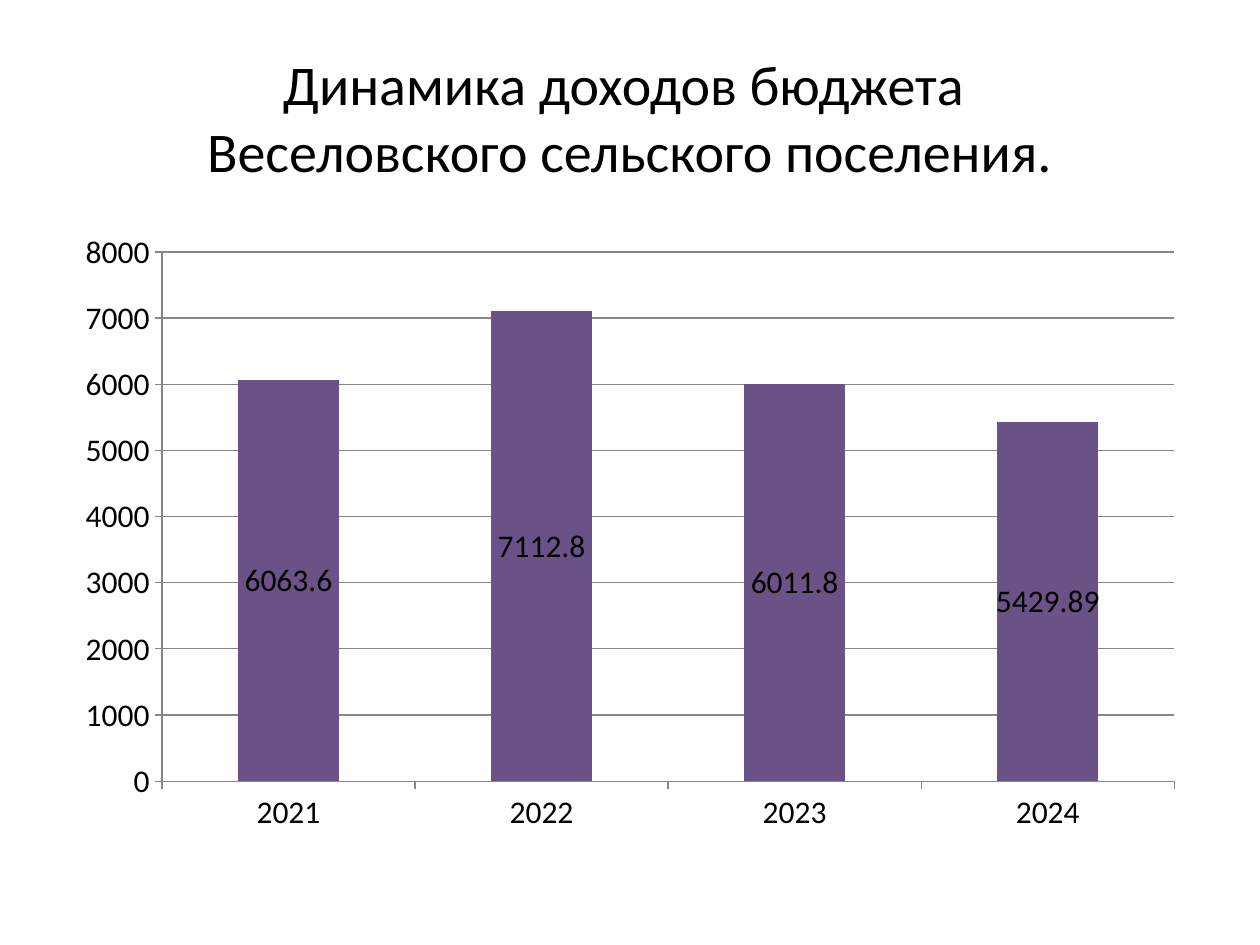
"""Build a slide with a stacked column chart of budget revenue by year."""
import pptx
import pptx.chart.data
import pptx.dml.color
import pptx.enum.chart
import pptx.enum.text
import pptx.util

TITLE = "Динамика доходов бюджета \vВеселовского сельского поселения."
YEARS = ["2021", "2022", "2023", "2024"]
SERIES = [
    ("Series 1", [6063.6, 7112.8, 6011.8, 5429.89], "revenue"),
    ("Series 2", [0, 0, 0, 0], "second"),
    ("Series 3", [0, 0, 0, 0], "third"),
]
THEME = {
    "font": "Calibri", "title_size": 32, "chart_size": 18,
    "text": "000000", "axis": "878787",
    "revenue": "6A5286", "second": "C0504D", "third": "9BBB59",
}
WIDTH, HEIGHT = pptx.util.Inches(10), pptx.util.Inches(7.5)
MARGIN, CONTENT = int(WIDTH * 0.05), int(WIDTH * 0.9)
TITLE_TOP, TITLE_HEIGHT = int(HEIGHT * 0.04), pptx.util.Inches(1.25)
CHART_TOP, CHART_HEIGHT = pptx.util.Inches(1.75), int(HEIGHT * 0.66)


def color(name):
    """Return a theme colour."""
    return pptx.dml.color.RGBColor.from_string(THEME[name])


def style_font(font, size):
    """Apply the theme font, size and text colour."""
    font.name = THEME["font"]
    font.size = pptx.util.Pt(THEME[size])
    font.color.rgb = color("text")


def style_line(line):
    """Draw an axis or grid line in the theme colour."""
    line.color.rgb = color("axis")
    line.width = pptx.util.Pt(0.75)


def add_title(slide):
    """Fill and place the title placeholder."""
    title = slide.shapes.title
    title.left, title.top = MARGIN, TITLE_TOP
    title.width, title.height = CONTENT, TITLE_HEIGHT
    tf = title.text_frame
    tf.text = TITLE
    tf.vertical_anchor = pptx.enum.text.MSO_ANCHOR.MIDDLE
    p = tf.paragraphs[0]
    p.alignment = pptx.enum.text.PP_ALIGN.CENTER
    for r in p.runs:
        style_font(r.font, "title_size")


def add_chart(slide):
    """Add the revenue chart with labels on its first series."""
    data = pptx.chart.data.CategoryChartData()
    data.categories = YEARS
    for name, values, _ in SERIES:
        data.add_series(name, values)
    chart = slide.shapes.add_chart(
        pptx.enum.chart.XL_CHART_TYPE.COLUMN_STACKED,
        MARGIN, CHART_TOP, CONTENT, CHART_HEIGHT, data).chart
    chart.has_legend = chart.has_title = False
    style_font(chart.font, "chart_size")

    plot = chart.plots[0]
    plot.gap_width, plot.overlap = 150, 100
    plot.vary_by_categories = False
    for series, (_, _, fill) in zip(plot.series, SERIES):
        series.format.fill.solid()
        series.format.fill.fore_color.rgb = color(fill)
    labels = plot.series[0].data_labels
    labels.show_value = True
    style_font(labels.font, "chart_size")

    for axis in (chart.category_axis, chart.value_axis):
        axis.major_tick_mark = pptx.enum.chart.XL_TICK_MARK.OUTSIDE
        style_line(axis.format.line)
    axis = chart.value_axis
    axis.minimum_scale, axis.maximum_scale, axis.major_unit = 0, 8000, 1000
    axis.has_major_gridlines = True
    style_line(axis.major_gridlines.format.line)


def main():
    """Create and save the presentation."""
    prs = pptx.Presentation()
    prs.slide_width, prs.slide_height = WIDTH, HEIGHT
    slide = prs.slides.add_slide(prs.slide_layouts[5])
    add_title(slide)
    add_chart(slide)
    prs.save("out.pptx")


if __name__ == "__main__":
    main()
